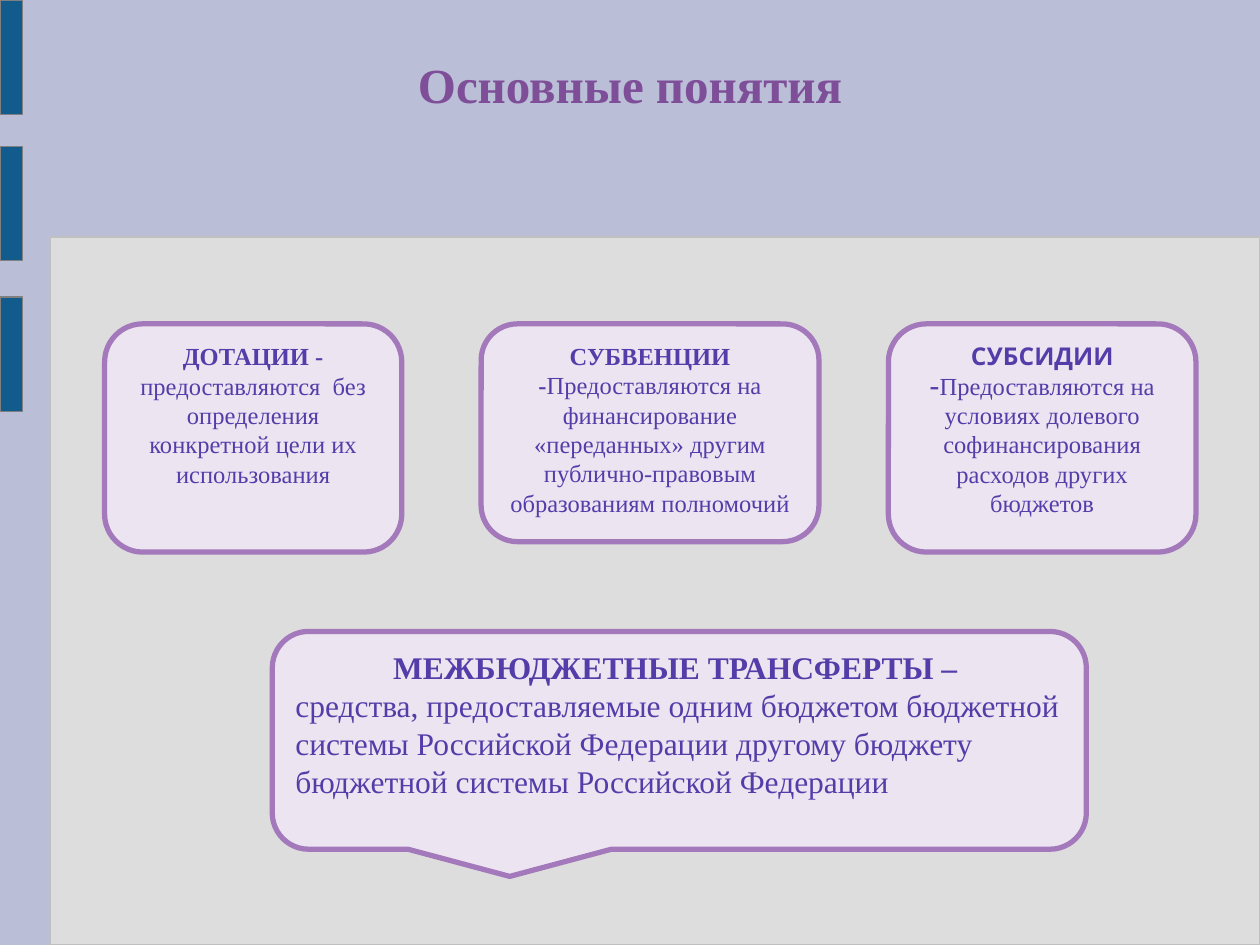
from pptx import Presentation
from pptx.dml.color import RGBColor
from pptx.enum import shapes, text
from pptx.util import Cm, Pt

BACK = RGBColor(0xBA, 0xBE, 0xD6)
PANEL = RGBColor(0xDD, 0xDD, 0xDD)
EDGE = RGBColor(0xC0, 0xC0, 0xC0)
BAR = RGBColor(0x12, 0x5C, 0x8D)
GRAY = RGBColor(0x80, 0x80, 0x80)
TITLE = RGBColor(0x7E, 0x4E, 0x99)
CARD = RGBColor(0xED, 0xE4, 0xF1)
RIM = RGBColor(0xA3, 0x79, 0xBB)
INK = RGBColor(0x53, 0x3E, 0xA9)
SERIF = "Times New Roman"
KIND = shapes.MSO_SHAPE
ALIGN = text.PP_ALIGN

CARDS = [
    (0, 5.99, 4.6, "ДОТАЦИИ - ", SERIF,
     "предоставляются  без определения конкретной цели их использования"),
    (7.59, 6.81, 4.39, "СУБВЕНЦИИ -", SERIF,
     "Предоставляются на финансирование «переданных» другим "
     "публично-правовым образованиям полномочий"),
    (15.8, 6.2, 4.6, "СУБСИДИИ -", "Cabin",
     "Предоставляются на условиях долевого софинансирования расходов "
     "других бюджетов"),
]


def add_shape(slide, kind, box, fill, line, width):
    shape = slide.shapes.add_shape(kind, *map(Cm, box))
    shape.shadow.inherit = False
    shape.fill.solid()
    shape.fill.fore_color.rgb = fill
    shape.line.color.rgb = line
    shape.line.width = Pt(width)
    frame = shape.text_frame
    frame.word_wrap = True
    frame.vertical_anchor = text.MSO_ANCHOR.TOP
    return shape


def style(para, size, color, align):
    para.alignment = align
    para.font.size = Pt(size)
    para.font.name = SERIF
    para.font.color.rgb = color


def add_run(para, words, bold, font=SERIF):
    run = para.add_run()
    run.text = words
    run.font.bold = bold
    run.font.name = font


def add_frame(slide, box):
    left, top, width, height = box
    slide.background.fill.solid()
    slide.background.fill.fore_color.rgb = BACK
    add_shape(slide, KIND.RECTANGLE,
              (left + 1.02, top + 4.78, width - 1.02, height - 4.78),
              PANEL, EDGE, 0.75)
    for drop in (0, 2.95, 5.99):
        add_shape(slide, KIND.RECTANGLE, (left, top + drop, 0.46, 2.31),
                  BAR, GRAY, 0.75)


def add_title(slide, box):
    frame = slide.shapes.add_textbox(*map(Cm, box)).text_frame
    frame.word_wrap = True
    para = frame.paragraphs[0]
    style(para, 28, TITLE, ALIGN.CENTER)
    add_run(para, "Основные понятия", True)


def add_cards(slide, box):
    left, top = box
    for shift, width, height, term, font, words in CARDS:
        card = add_shape(slide, KIND.FLOWCHART_ALTERNATE_PROCESS,
                         (left + shift, top, width, height), CARD, RIM, 3)
        para = card.text_frame.paragraphs[0]
        style(para, 14, INK, ALIGN.CENTER)
        add_run(para, term, True, font)
        add_run(para, words, False)


def add_callout(slide, box):
    shape = add_shape(slide, KIND.ROUNDED_RECTANGULAR_CALLOUT, box,
                      CARD, RIM, 3)
    frame = shape.text_frame
    head = frame.paragraphs[0]
    style(head, 18, INK, ALIGN.CENTER)
    add_run(head, "МЕЖБЮДЖЕТНЫЕ ТРАНСФЕРТЫ – ", True)
    body = frame.add_paragraph()
    style(body, 18, INK, ALIGN.LEFT)
    add_run(body, "средства, предоставляемые одним бюджетом бюджетной системы "
            "Российской Федерации другому бюджету бюджетной системы "
            "Российской Федерации", False)


def main():
    deck = Presentation()
    deck.slide_width, deck.slide_height = Cm(25.4), Cm(19.05)
    slide = deck.slides.add_slide(deck.slide_layouts[6])
    add_frame(slide, (0, 0, 25.4, 19.05))
    add_title(slide, (1.27, 0.98, 22.86, 3.48))
    add_cards(slide, (2.11, 6.53))
    add_callout(slide, (5.49, 12.73, 16.41, 4.39))
    deck.save("out.pptx")


if __name__ == "__main__":
    main()
